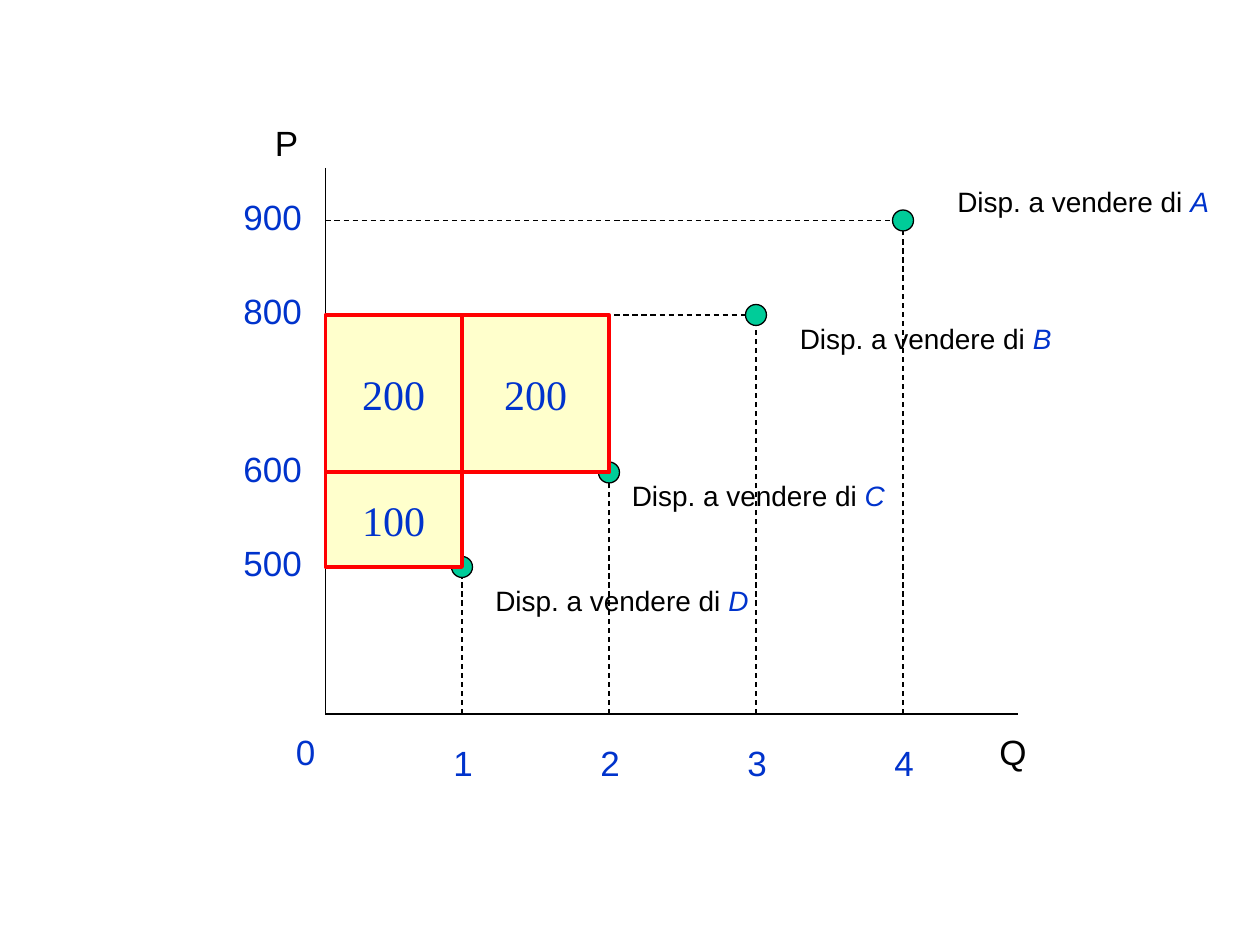
from dataclasses import dataclass

from lxml.etree import SubElement
from pptx import Presentation
from pptx.dml.color import RGBColor
from pptx.enum.dml import MSO_LINE
from pptx.enum.shapes import MSO_CONNECTOR, MSO_SHAPE
from pptx.enum.text import MSO_ANCHOR, MSO_AUTO_SIZE, PP_ALIGN
from pptx.oxml.ns import qn
from pptx.util import Pt


@dataclass(frozen=True)
class Theme:
    ink: str = "000000"
    blue: str = "0033CC"
    green: str = "00CC99"
    cream: str = "FFFFCC"
    red: str = "FF0000"
    sans: str = "Arial"
    serif: str = "Times New Roman"
    note: int = 16
    tick: int = 20
    value: int = 24
    thin: float = 0.75
    thick: float = 2.25


def assign(target, values):
    for name, value in values.items():
        setattr(target, name, value)


class Chart:
    """Draws the parts of a market diagram on one slide."""

    def __init__(self, slide, theme):
        self.shapes = slide.shapes
        self.theme = theme

    def stroke(self, line, color, width, dash=None):
        line.color.rgb = RGBColor.from_string(color)
        assign(line, {"width": Pt(width), "dash_style": dash})

    def run(self, para, text, color, size, font, italic=None):
        run = para.add_run()
        run.text = text
        assign(run.font, {"name": font, "size": Pt(size), "italic": italic})
        run.font.color.rgb = RGBColor.from_string(color)

    def line(self, start, end, dash=None):
        ends = [Pt(v) for v in (*start, *end)]
        line = self.shapes.add_connector(MSO_CONNECTOR.STRAIGHT, *ends)
        self.stroke(line.line, self.theme.ink, self.theme.thin, dash)
        SubElement(line._element.spPr, qn("a:effectLst"))

    def text(self, left, top, width, height, size, *parts):
        box = self.shapes.add_textbox(Pt(left), Pt(top), Pt(width), Pt(height))
        frame = box.text_frame
        assign(frame, {"word_wrap": False,
                       "auto_size": MSO_AUTO_SIZE.SHAPE_TO_FIT_TEXT})
        for text, color, italic in parts:
            self.run(frame.paragraphs[0], text, color, size,
                     self.theme.sans, italic)

    def label(self, left, top, text, color, width=26):
        self.text(left, top, width, 31, self.theme.tick, (text, color, None))

    def note(self, left, top, seller):
        self.text(left, top, 160, 26.5, self.theme.note,
                  ("Disp. a vendere di ", self.theme.ink, None),
                  (seller, self.theme.blue, True))

    def shape(self, kind, left, top, width, height, fill, edge, weight):
        shape = self.shapes.add_shape(
            kind, Pt(left), Pt(top), Pt(width), Pt(height))
        shape.shadow.inherit = False
        shape.fill.solid()
        shape.fill.fore_color.rgb = RGBColor.from_string(fill)
        self.stroke(shape.line, edge, weight)
        return shape

    def dot(self, x, y, size=12):
        self.shape(MSO_SHAPE.OVAL, x - size / 2, y - size / 2, size, size,
                   self.theme.green, self.theme.ink, self.theme.thin)

    def block(self, left, top, right, base, text):
        look = self.theme
        block = self.shape(MSO_SHAPE.RECTANGLE, left, top, right - left,
                           base - top, look.cream, look.red, look.thick)
        frame = block.text_frame
        assign(frame, {"word_wrap": False,
                       "vertical_anchor": MSO_ANCHOR.MIDDLE})
        para = frame.paragraphs[0]
        para.alignment = PP_ALIGN.CENTER
        self.run(para, text, look.blue, look.value, look.serif)


def main():
    deck = Presentation()
    assign(deck, {"slide_width": Pt(720), "slide_height": Pt(540)})
    theme = Theme()
    chart = Chart(deck.slides.add_slide(deck.slide_layouts[6]), theme)

    # Plot positions: quantity across, price up
    left, base = 186, 408
    cols = {n: 180 + 84 * n for n in range(1, 5)}
    rows = {500: 324, 600: 270, 800: 180, 900: 126}
    points = list(zip(cols.values(), rows.values()))

    # Axes
    chart.line((left, 96), (left, base))
    chart.line((left, base), (582, base))
    chart.label(564, 414, "Q", theme.ink, 30.5)
    chart.label(150, 66, "P", theme.ink, 28)

    # Tick labels
    chart.label(162, 414, "0", theme.blue)
    for count, x in cols.items():
        chart.label(x - 12, 420, str(count), theme.blue)
    for price, y in rows.items():
        chart.label(132, y - 18, str(price), theme.blue, 48)

    # Dashed guides
    for x, y in points:
        chart.line((left, y), (x, y), MSO_LINE.DASH)
        chart.line((x, base), (x, y), MSO_LINE.DASH)

    # Sellers
    for x, y in points:
        chart.dot(x, y)
    for spot in ((276, 330, "D"), (354, 270, "C"),
                 (450, 180, "B"), (540, 102, "A")):
        chart.note(*spot)

    # Surplus blocks
    for start, end, high, low in ((left, cols[1], 600, 500),
                                  (left, cols[1], 800, 600),
                                  (cols[1], cols[2], 800, 600)):
        chart.block(start, rows[high], end, rows[low], str(high - low))

    deck.save("out.pptx")


if __name__ == "__main__":
    main()
